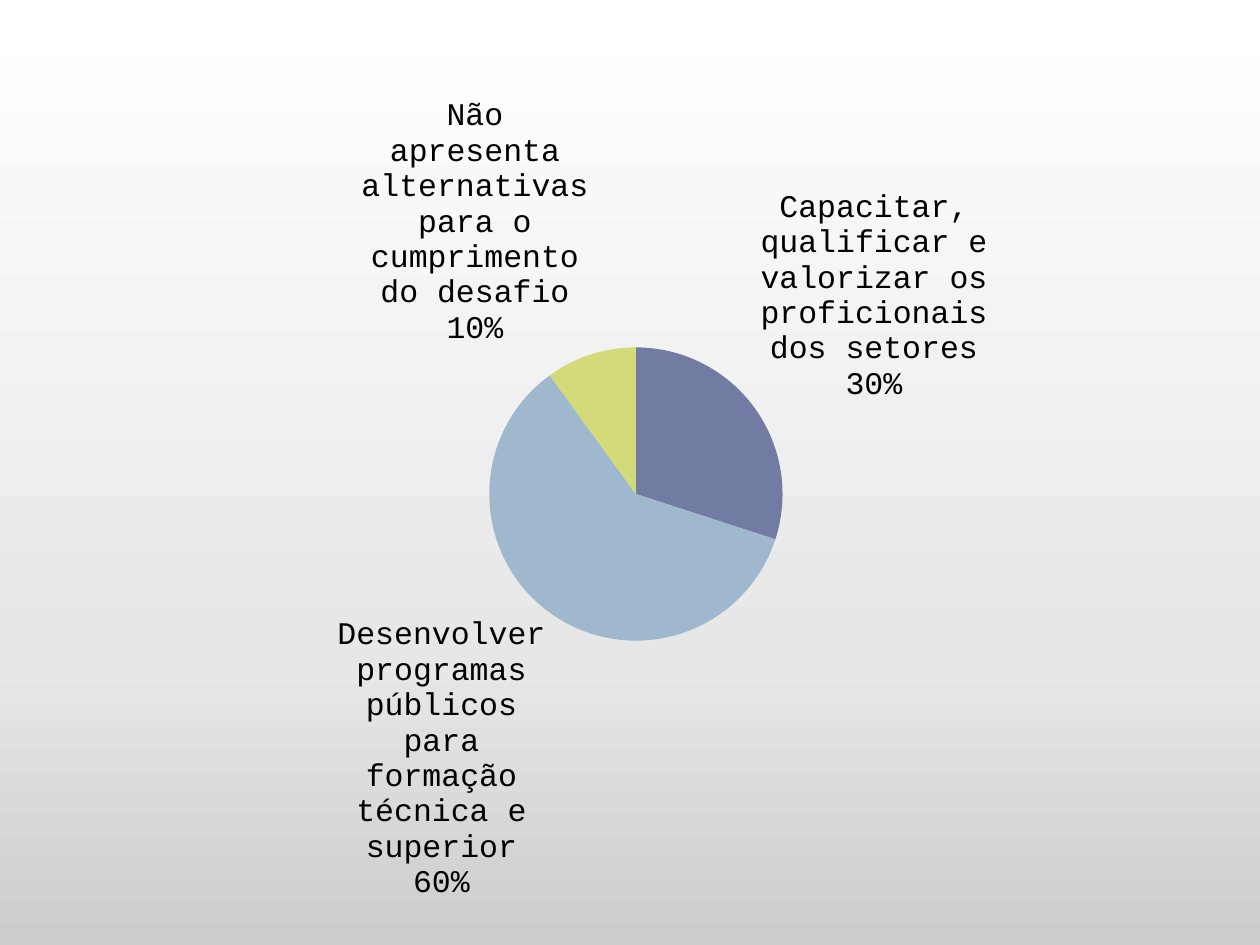
import copy
import pptx
import pptx.chart.data
import pptx.dml.color
import pptx.enum.chart
import pptx.oxml
import pptx.oxml.ns
import pptx.util

Pt = pptx.util.Pt
qn = pptx.oxml.ns.qn

SHADES = [(0, "CCCCCC"), (0.3, "E7E7E7"), (1, "FFFFFF")]
PARTS = [
    ("Capacitar, qualificar e valorizar os proficionais dos setores", 30, "727CA3"),
    ("Desenvolver programas públicos para formação técnica e superior", 60, "9FB8CD"),
    ("Não apresenta alternativas para o cumprimento do desafio", 10, "D2DA7A"),
]
PIE = {"x": 0.38, "y": 0.35, "w": 0.25, "h": 0.34}


def color(code):
    return pptx.dml.color.RGBColor.from_string(code)


def paint_back(slide):
    fill = slide.background.fill
    fill.gradient()
    fill.gradient_angle = 90
    stops = slide.element.find(".//" + qn("a:gsLst"))
    stops.insert(1, copy.deepcopy(stops[0]))
    for stop, (place, code) in zip(fill.gradient_stops, SHADES):
        stop.position = place
        stop.color.rgb = color(code)


def place_pie(chart):
    area = chart.element.find(".//" + qn("c:plotArea"))
    for old in area.findall(qn("c:layout")):
        area.remove(old)
    sizes = "".join(f'<c:{key} val="{val}"/>' for key, val in PIE.items())
    area.insert(0, pptx.oxml.parse_xml(
        f'<c:layout {pptx.oxml.ns.nsdecls("c")}><c:manualLayout>'
        '<c:layoutTarget val="inner"/><c:xMode val="edge"/><c:yMode val="edge"/>'
        f'{sizes}</c:manualLayout></c:layout>'))


def set_font(font):
    font.name = "Courier New"
    font.size = Pt(18)
    font.color.rgb = color("000000")


def add_labels(plot):
    plot.has_data_labels = True
    labels = plot.data_labels
    set_font(labels.font)
    labels.number_format = "0%"
    labels.number_format_is_linked = False
    labels.position = pptx.enum.chart.XL_LABEL_POSITION.OUTSIDE_END
    labels.show_value = False
    labels.show_category_name = True
    labels.show_percentage = True
    split = pptx.oxml.parse_xml(
        f'<c:separator {pptx.oxml.ns.nsdecls("c")}>\n</c:separator>')
    node = plot._element.find(qn("c:dLbls"))
    node.find(qn("c:showBubbleSize")).addnext(split)


def add_pie(slide):
    data = pptx.chart.data.CategoryChartData()
    data.categories = [name for name, _, _ in PARTS]
    data.add_series("Series 1", [value for _, value, _ in PARTS])
    chart = slide.shapes.add_chart(
        pptx.enum.chart.XL_CHART_TYPE.PIE,
        Pt(20), Pt(26), Pt(680), Pt(493), data).chart
    chart.has_legend = False
    chart.has_title = False
    set_font(chart.font)
    plot = chart.plots[0]
    plot.vary_by_categories = True
    for index, (_, _, code) in enumerate(PARTS):
        form = plot.series[0].points[index].format
        form.fill.solid()
        form.fill.fore_color.rgb = color(code)
        form.line.fill.background()
    add_labels(plot)
    place_pie(chart)


def main():
    deck = pptx.Presentation()
    deck.slide_width, deck.slide_height = Pt(720), Pt(540)
    slide = deck.slides.add_slide(deck.slide_layouts[6])
    paint_back(slide)
    add_pie(slide)
    deck.save("out.pptx")


if __name__ == "__main__":
    main()
